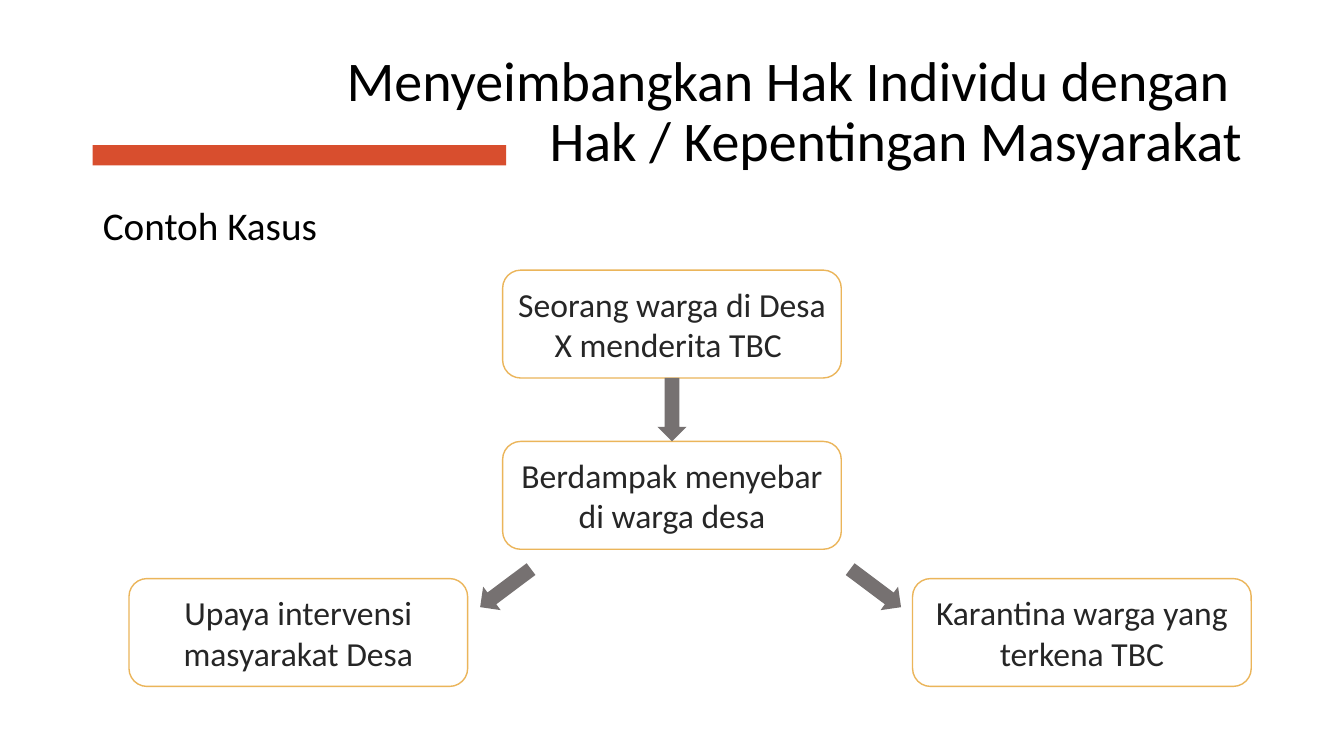
"""Build a slide that shows a case as a branching flow of boxes."""
from lxml.etree import SubElement
from pptx import Presentation
from pptx.dml.color import RGBColor
from pptx.enum.shapes import MSO_SHAPE as Shape
from pptx.enum.text import MSO_ANCHOR as Anchor, MSO_AUTO_SIZE as Fit, PP_ALIGN as Align
from pptx.oxml.ns import qn
from pptx.util import Inches, Pt

WIDTH, HEIGHT = Inches(13.33), Inches(7.5)
COLUMN, ROW = WIDTH / 100, HEIGHT / 100
BOX_SIZE = (25.2, 14.27)
ARROW_SIZE = (2.18, 8.4)
MIDDLE = 50
BLACK, INK, ACCENT, GOLD, GRAY = "000000", "262626", "D84E2E", "EBB55A", "767171"

STEPS = [
    ("Seorang warga di Desa X menderita TBC ", MIDDLE, 42.87),
    ("Berdampak menyebar di warga desa", MIDDLE, 65.53),
    ("Upaya intervensi masyarakat Desa", 22.2, 83.67),
    ("Karantina warga yang terkena TBC", 80.5, 83.67),
]
ARROWS = [(MIDDLE, 54.2, 0), (37.62, 77.8, 53.2), (65.15, 77.8, 306.8)]


def color(code):
    """Turn a hex string into a colour."""
    return RGBColor.from_string(code)


def grid(left, top, width, height):
    """Turn columns and rows of the hundred-part grid into lengths."""
    return [round(n * unit) for n, unit in zip((left, top, width, height), (COLUMN, ROW) * 2)]


def centred(x, y, size):
    """Give the grid area of a given size around a centre."""
    width, height = size
    return x - width / 2, y - height / 2, width, height


def write(shape, text, size, ink=BLACK, align=Align.LEFT, anchor=Anchor.TOP, spacing=1.0, before=0):
    """Put one formatted paragraph into a shape."""
    frame = shape.text_frame
    frame.word_wrap = True
    frame.auto_size = Fit.NONE
    frame.vertical_anchor = anchor
    para = frame.paragraphs[0]
    para.text = text
    para.alignment = align
    para.line_spacing = spacing
    para.space_before = Pt(before)
    for run in para.runs:
        run.font.name = "Calibri"
        run.font.size = Pt(size)
        run.font.color.rgb = color(ink)
    return para


def fill_placeholder(holder, area, text, size, **style):
    """Move a placeholder and write its text without a bullet."""
    holder.left, holder.top, holder.width, holder.height = grid(*area)
    properties = write(holder, text, size, spacing=0.9, **style)._p.get_or_add_pPr()
    properties.set("marL", "0")
    properties.set("indent", "0")
    SubElement(properties, qn("a:buNone"))


def add_solid(page, kind, area, fill, rotation=0):
    """Add a filled shape without an outline."""
    shape = page.shapes.add_shape(kind, *grid(*area))
    shape.shadow.inherit = False
    shape.fill.solid()
    shape.fill.fore_color.rgb = color(fill)
    shape.line.fill.background()
    shape.rotation = rotation


def add_step(page, text, x, y):
    """Add an outlined rounded box with centred text."""
    box = page.shapes.add_shape(Shape.ROUNDED_RECTANGLE, *grid(*centred(x, y, BOX_SIZE)))
    box.shadow.inherit = False
    box.fill.background()
    box.line.color.rgb = color(GOLD)
    box.line.width = Pt(1)
    write(box, text, 24, ink=INK, align=Align.CENTER, anchor=Anchor.MIDDLE)


def main():
    """Build and save the deck."""
    deck = Presentation()
    deck.slide_width, deck.slide_height = WIDTH, HEIGHT
    page = deck.slides.add_slide(deck.slide_layouts[1])
    title, body = page.placeholders
    fill_placeholder(title, (6.9, 5.33, 86.25, 19.33),
                     "Menyeimbangkan Hak Individu dengan \nHak / Kepentingan Masyarakat",
                     40, align=Align.RIGHT, anchor=Anchor.MIDDLE)
    fill_placeholder(body, (6.9, 26.67, 86.25, 63.47), "Contoh Kasus", 28, before=10)
    add_solid(page, Shape.RECTANGLE, (6.9, 19.2, 30.76, 2.67), ACCENT)
    for text, x, y in STEPS:
        add_step(page, text, x, y)
    for x, y, rotation in ARROWS:
        add_solid(page, Shape.DOWN_ARROW, centred(x, y, ARROW_SIZE), GRAY, rotation)
    deck.save("out.pptx")


if __name__ == "__main__":
    main()
